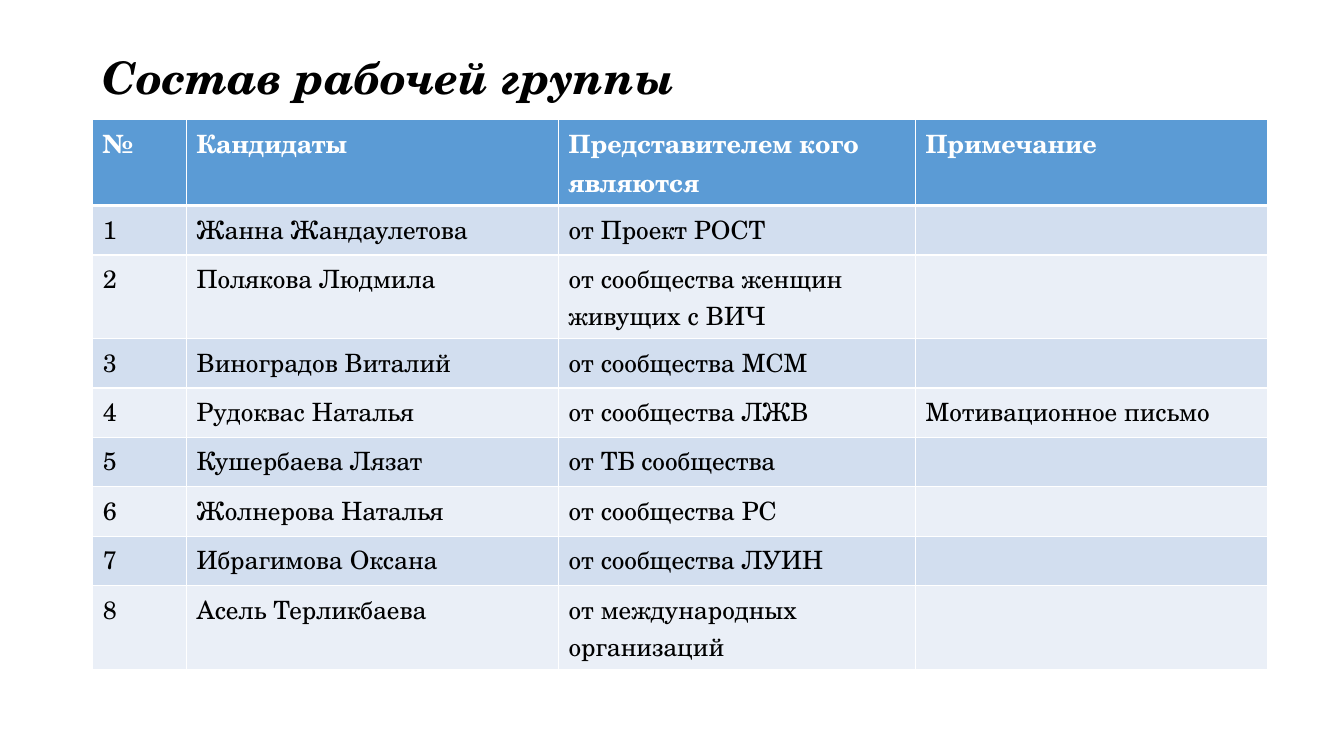
from lxml import etree
from pptx import Presentation
from pptx.dml.color import RGBColor
from pptx.enum.text import MSO_ANCHOR
from pptx.oxml.ns import qn
from pptx.util import Inches, Pt

MIDDLE = MSO_ANCHOR.MIDDLE
BLACK = RGBColor(0x00, 0x00, 0x00)
WHITE = RGBColor(0xFF, 0xFF, 0xFF)
BLUE = RGBColor(0x5B, 0x9B, 0xD5)
BANDS = [RGBColor(0xEA, 0xEF, 0xF7), RGBColor(0xD2, 0xDE, 0xEF)]
FONT = "TeX Gyre Schola"

LEFT, TOP = 0.92, 1.18
COLS = [0.93, 3.69, 3.54, 3.49]
TALL, ONE, TWO = 0.86, 0.49, 0.83  # heights: header, one line, two lines
HEAD = ["№", "Кандидаты", "Представителем кого являются", "Примечание"]
GROUP = [
    ("Жанна Жандаулетова", "от Проект РОСТ", "", ONE),
    ("Полякова Людмила", "от сообщества женщин живущих с ВИЧ", "", TWO),
    ("Виноградов Виталий", "от сообщества МСМ", "", ONE),
    ("Рудоквас Наталья", "от сообщества ЛЖВ", "Мотивационное письмо", ONE),
    ("Кушербаева Лязат", "от ТБ сообщества", "", ONE),
    ("Жолнерова Наталья", "от сообщества РС", "", ONE),
    ("Ибрагимова Оксана", "от сообщества ЛУИН", "", ONE),
    ("Асель Терликбаева", "от международных организаций", "", TWO),
]


def style(par, size, color, bold, italic=False):
    for run in par.runs:
        font = run.font
        font.name, font.size = FONT, Pt(size)
        font.bold, font.italic = bold, italic
        font.color.rgb = color


def border(cell, widths):
    props = cell._tc.get_or_add_tcPr()
    for i, (side, width) in enumerate(widths.items()):
        line = etree.Element(qn("a:ln" + side), w=str(Pt(width)))
        fill = etree.SubElement(line, qn("a:solidFill"))
        etree.SubElement(fill, qn("a:srgbClr"), val=str(WHITE))
        props.insert(i, line)


prs = Presentation()
prs.slide_width, prs.slide_height = Inches(13.33), Inches(7.5)
slide = prs.slides.add_slide(prs.slide_layouts[6])

# Title
title = slide.shapes.add_textbox(Inches(LEFT), Inches(0.4), Inches(11.5), Inches(0.78))
frame = title.text_frame
frame.word_wrap = True
frame.vertical_anchor = MIDDLE
frame.text = "Состав рабочей группы"
frame.paragraphs[0].line_spacing = 0.9
style(frame.paragraphs[0], 32, BLACK, True, True)

# Table grid
rows = [HEAD] + [[str(n), *who[:3]] for n, who in enumerate(GROUP, 1)]
highs = [TALL] + [who[3] for who in GROUP]
table = slide.shapes.add_table(
    len(rows), len(COLS), Inches(LEFT), Inches(TOP),
    Inches(sum(COLS)), Inches(sum(highs))).table
for col, width in zip(table.columns, COLS):
    col.width = Inches(width)
for row, high in zip(table.rows, highs):
    row.height = Inches(high)

# Cells: blue header, then banded rows
for r, row in enumerate(rows):
    head = r == 0
    for c, text in enumerate(row):
        cell = table.cell(r, c)
        cell.text = text
        style(cell.text_frame.paragraphs[0], 18, WHITE if head else BLACK, head)
        cell.fill.solid()
        cell.fill.fore_color.rgb = BLUE if head else BANDS[r % 2]
        border(cell, {"L": 1, "R": 1, "T": 3 if r == 1 else 1, "B": 3 if head else 1})

prs.save("out.pptx")
